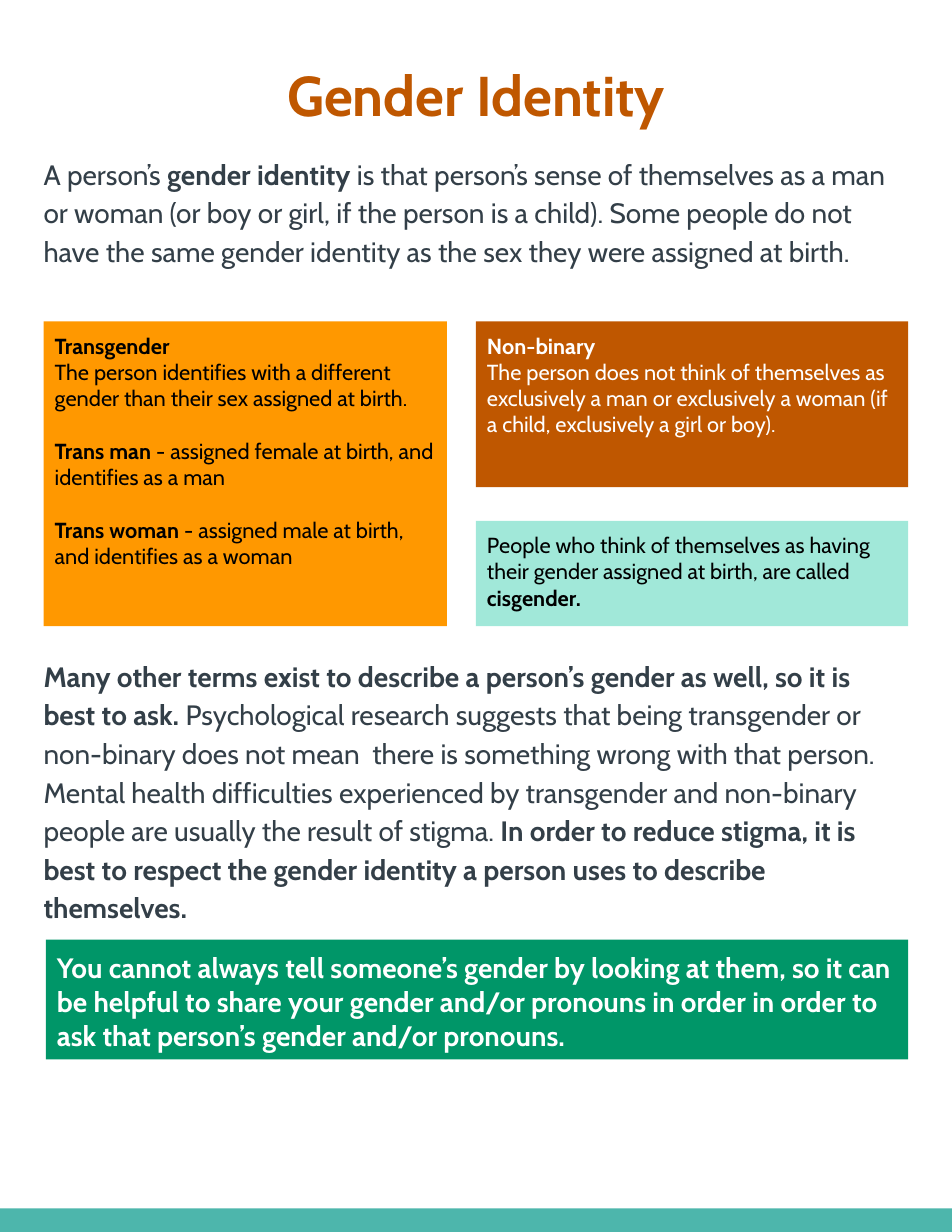
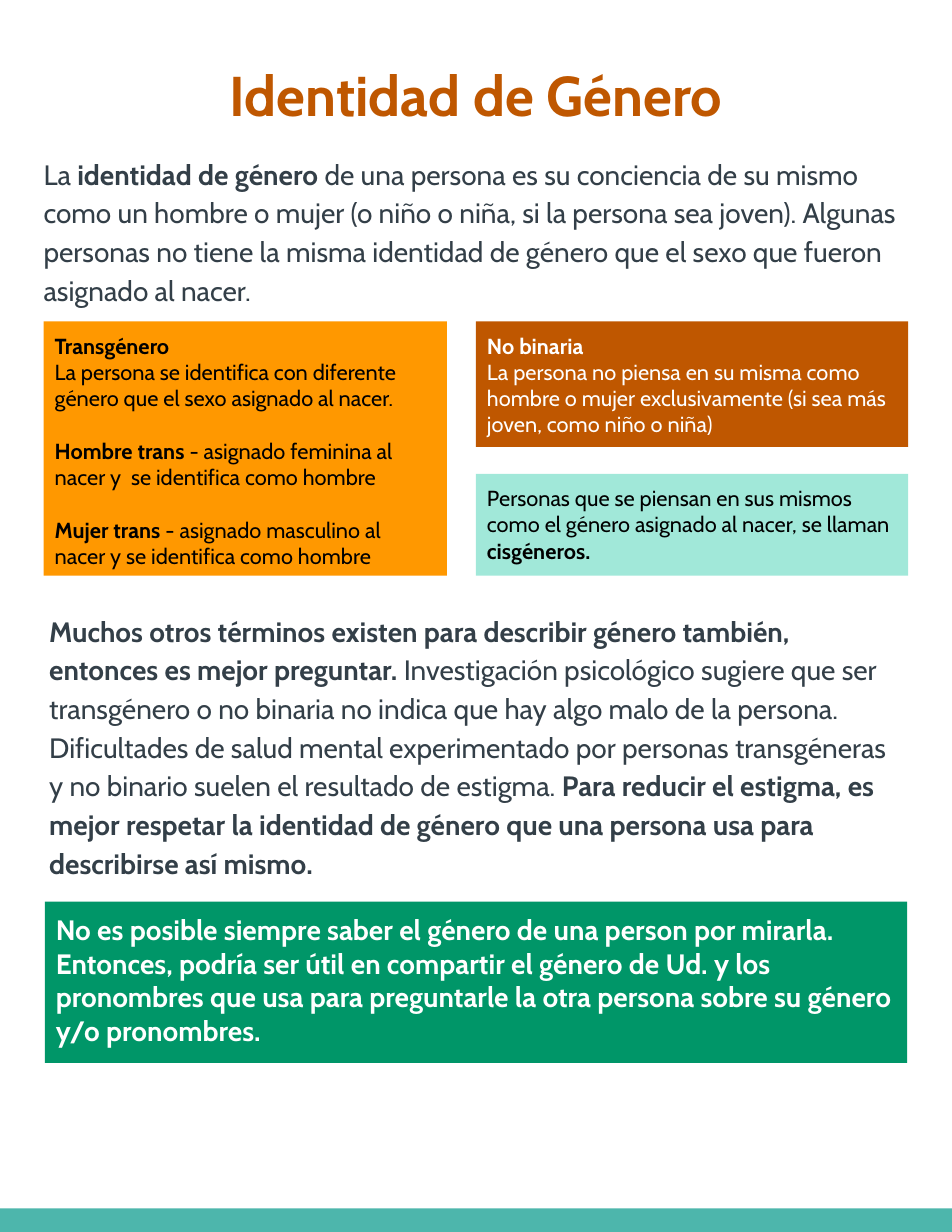
import pptx
import pptx.util
import pptx.dml.color
import pptx.enum.shapes
import pptx.enum.text

COLORS = {"title": "BF5700", "body": "333F48", "orange": "FF9800", "rust": "BF5700",
          "mint": "A1E8D9", "green": "009668", "band": "4DB6AC",
          "black": "000000", "white": "FFFFFF"}
FONT = "Cabin"
WIDTH, HEIGHT = pptx.util.Inches(8.5), pptx.util.Inches(11)
COLS, ROWS = 85, 110
LEFT, RIGHT, SPLIT = 3.9, 81.1, 42.5
BOX_TOP, BOX_WIDTH = 28.7, 36
BAND_ROWS = 2.1
CENTER = pptx.enum.text.PP_ALIGN.CENTER

PAGES = [
    {"title": "Gender Identity",
     "intro": "A person’s **gender identity** is that person’s sense of themselves as a man or woman "
              "(or boy or girl, if the person is a child). Some people do not have the same gender "
              "identity as the sex they were assigned at birth.",
     "trans": ["**Transgender**",
               "The person identifies with a different gender than their sex assigned at birth.",
               "**Trans man **- assigned female at birth, and identifies as a man",
               "**Trans woman **- assigned male at birth, and identifies as a woman"],
     "nonbinary": ["**Non-binary**",
                   "The person does not think of themselves as exclusively a man or exclusively a "
                   "woman (if a child, exclusively a girl or boy)."],
     "cisgender": ["People who think of themselves as having their gender assigned at birth, "
                   "are called **cisgender.**"],
     "advice": "**Many other terms exist to describe a person’s gender as well, so it is best to "
               "ask. **Psychological research suggests that being transgender or non-binary does "
               "not mean  there is something wrong with that person. Mental health difficulties "
               "experienced by transgender and non-binary people are usually the result of stigma."
               "** In order to reduce stigma, it is best to respect the gender identity a person "
               "uses to describe themselves.**",
     "callout": "**You cannot always tell someone’s gender by looking at them, so it can be helpful "
                "to share your gender and/or pronouns in order in order to ask that person’s gender "
                "and/or pronouns.**",
     "boxes_bottom": 55.9, "nonbinary_rows": 14.8, "cisgender_rows": 9.4,
     "advice_at": (2.9, 57.4), "callout_at": (4.1, 83.9), "callout_rows": 10.7},
    {"title": "Identidad de Género",
     "intro": "La **identidad de género** de una persona es su conciencia de su mismo como un hombre "
              "o mujer (o niño o niña, si la persona sea joven). Algunas personas no tiene la misma "
              "identidad de género que el sexo que fueron asignado al nacer.",
     "trans": ["**Transgénero**",
               "La persona se identifica con diferente género que el sexo asignado al nacer.",
               "**Hombre trans **- asignado feminina al nacer y  se identifica como hombre",
               "**Mujer trans **- asignado masculino al nacer y se identifica como hombre"],
     "nonbinary": ["**No binaria**",
                   "La persona no piensa en su misma como hombre o mujer exclusivamente "
                   "(si sea más joven, como niño o niña)"],
     "cisgender": ["Personas que se piensan en sus mismos como el género asignado al nacer, "
                   "se llaman **cisgéneros.**"],
     "advice": "**Muchos otros términos existen para describir género también, entonces es mejor "
               "preguntar. **Investigación psicológico sugiere que ser transgénero o no binaria no "
               "indica que hay algo malo de la persona. Dificultades de salud mental experimentado "
               "por personas transgéneras y no binario suelen el resultado de estigma."
               "** Para reducir el estigma, es mejor respetar la identidad de género que una persona "
               "usa para describirse así mismo.**",
     "callout": "**No es posible siempre saber el género de una person por mirarla. Entonces, podría "
                "ser útil en compartir el género de Ud. y los pronombres que usa para preguntarle la "
                "otra persona sobre su género y/o pronombres.**",
     "boxes_bottom": 51.4, "nonbinary_rows": 11.2, "cisgender_rows": 9.1,
     "advice_at": (3.4, 53.4), "callout_at": (4, 80.5), "callout_rows": 14.4},
]


def rgb(name):
    """Return the named colour."""
    return pptx.dml.color.RGBColor.from_string(COLORS[name])


def place(col, row, cols, rows):
    """Turn grid cells into left, top, width and height."""
    return (round(WIDTH * col / COLS), round(HEIGHT * row / ROWS),
            round(WIDTH * cols / COLS), round(HEIGHT * rows / ROWS))


def write(sp, paragraphs, size=18, color="body", align=pptx.enum.text.PP_ALIGN.LEFT,
          spacing=None, after=0, gap_from=None, gap=17):
    """Fill a shape with paragraphs in which ** switches bold on and off."""
    tf = sp.text_frame
    tf.word_wrap = True
    tf.vertical_anchor = pptx.enum.text.MSO_ANCHOR.TOP
    tf.margin_left = tf.margin_right = tf.margin_top = tf.margin_bottom = pptx.util.Inches(0.1)
    for i, text in enumerate(paragraphs):
        p = tf.add_paragraph() if i else tf.paragraphs[0]
        p.alignment = align
        p.line_spacing = spacing
        p.space_after = pptx.util.Pt(after)
        if gap_from is not None and i >= gap_from:
            p.space_before = pptx.util.Pt(gap)
        for j, part in enumerate(text.split("**")):
            if part:
                r = p.add_run()
                r.text = part
                r.font.name = FONT
                r.font.size = pptx.util.Pt(size)
                r.font.bold = j % 2 == 1
                r.font.color.rgb = rgb(color)


def add_text(s, at, text, **fmt):
    """Add a text box on the grid."""
    write(s.shapes.add_textbox(*place(*at)), [text], **fmt)


def add_box(s, at, fill, paragraphs=(), **fmt):
    """Add a plain filled rectangle on the grid, with text if given."""
    sp = s.shapes.add_shape(pptx.enum.shapes.MSO_SHAPE.RECTANGLE, *place(*at))
    sp.shadow.inherit = False
    sp.fill.solid()
    sp.fill.fore_color.rgb = rgb(fill)
    sp.line.fill.background()
    if paragraphs:
        write(sp, paragraphs, **fmt)


def add_definitions(s, page):
    """Add the three boxes that define the terms."""
    bottom, cis_rows = page["boxes_bottom"], page["cisgender_rows"]
    right_width = RIGHT - SPLIT
    add_box(s, (LEFT, BOX_TOP, BOX_WIDTH, bottom - BOX_TOP), "orange", page["trans"],
            size=14, color="black", gap_from=2)
    add_box(s, (SPLIT, BOX_TOP, right_width, page["nonbinary_rows"]), "rust", page["nonbinary"],
            size=14, color="white")
    add_box(s, (SPLIT, bottom - cis_rows, right_width, cis_rows), "mint", page["cisgender"],
            size=14, color="black")


def add_page(prs, page):
    """Build one handout page."""
    s = prs.slides.add_slide(prs.slide_layouts[6])
    add_box(s, (0, ROWS - BAND_ROWS, COLS, BAND_ROWS), "band")
    add_text(s, (LEFT, 4.4, RIGHT - LEFT, 8), f"**{page['title']}**",
             size=36, color="title", align=CENTER)
    add_text(s, (2.9, 12.6, 79.2, 15.5), page["intro"], spacing=1.15, after=16)
    add_definitions(s, page)
    add_text(s, (*page["advice_at"], 78.2, 25.9), page["advice"], spacing=1.15, after=16)
    add_box(s, (*page["callout_at"], 77, page["callout_rows"]), "green", [page["callout"]],
            color="white")


def main():
    """Build the handout in both languages and save it."""
    prs = pptx.Presentation()
    prs.slide_width, prs.slide_height = WIDTH, HEIGHT
    for page in PAGES:
        add_page(prs, page)
    prs.save("out.pptx")


if __name__ == "__main__":
    main()
